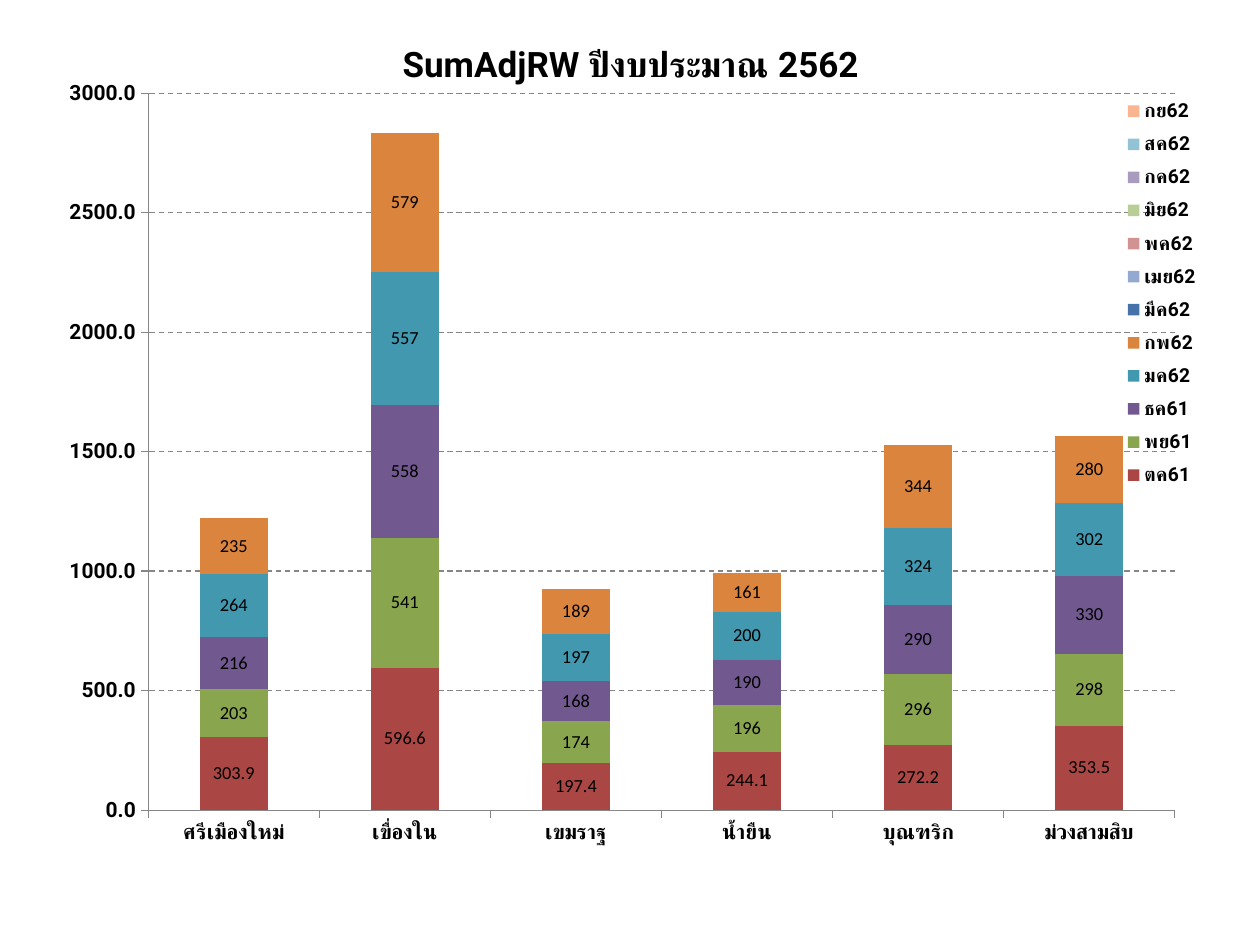
import lxml.etree
import pptx
import pptx.chart.data
import pptx.dml.color
import pptx.enum.chart
import pptx.enum.dml
import pptx.enum.text
import pptx.oxml.ns
import pptx.util
from pptx.util import Inches

DISTRICTS = ["ศรีเมืองใหม่", "เขื่องใน", "เขมราฐ", "น้ำยืน", "บุณฑริก", "ม่วงสามสิบ"]
NO_DATA = [None] * len(DISTRICTS)
MONTHS = [
    ("ตค61", "AA4643", [303.9, 596.6, 197.4, 244.1, 272.2, 353.5]),
    ("พย61", "89A54E", [203, 541, 174, 196, 296, 298]),
    ("ธค61", "71588F", [216, 558, 168, 190, 290, 330]),
    ("มค62", "4198AF", [264, 557, 197, 200, 324, 302]),
    ("กพ62", "DB843D", [235, 579, 189, 161, 344, 280]),
    ("มีค62", "4572A7", NO_DATA),
    ("เมย62", "93A9CF", NO_DATA),
    ("พค62", "D19392", NO_DATA),
    ("มิย62", "B9CD96", NO_DATA),
    ("กค62", "A99BBD", NO_DATA),
    ("สค62", "91C3D5", NO_DATA),
    ("กย62", "F9B590", NO_DATA),
]


def rgb(value):
    return pptx.dml.color.RGBColor.from_string(value)


def style_font(font, size, bold=True, name="Roboto"):
    font.size = pptx.util.Pt(size)
    font.bold = bold
    font.name = name
    font.color.rgb = rgb("000000")


def style_line(line, dashed=False):
    line.color.rgb = rgb("868686")
    line.width = pptx.util.Pt(0.75)
    if dashed:
        line.dash_style = pptx.enum.dml.MSO_LINE.DASH


def manual_layout(x, y, w, h, inner=False):
    qn = pptx.oxml.ns.qn
    layout = lxml.etree.Element(qn("c:layout"))
    manual = lxml.etree.SubElement(layout, qn("c:manualLayout"))
    settings = [("layoutTarget", "inner")] if inner else []
    settings += [("xMode", "edge"), ("yMode", "edge")]
    settings += [("x", x), ("y", y), ("w", w), ("h", h)]
    for tag, value in settings:
        lxml.etree.SubElement(manual, qn(f"c:{tag}")).set("val", str(value))
    return layout


def clear_layout(parent):
    for layout in parent.findall(pptx.oxml.ns.qn("c:layout")):
        parent.remove(layout)


def place_plot(chart):
    plot_area = chart.element.find(".//" + pptx.oxml.ns.qn("c:plotArea"))
    clear_layout(plot_area)
    plot_area.insert(0, manual_layout(0.089, 0.034, 0.877, 0.881, inner=True))


def add_month_legend(chart):
    chart.has_legend = True
    chart.legend.position = pptx.enum.chart.XL_LEGEND_POSITION.RIGHT
    chart.legend.include_in_layout = True
    style_font(chart.legend.font, 11)
    legend = chart.element.find(".//" + pptx.oxml.ns.qn("c:legend"))
    clear_layout(legend)
    overlay = legend.find(pptx.oxml.ns.qn("c:overlay"))
    overlay.addprevious(manual_layout(0.91, 0.03, 0.09, 0.5))


def style_axis(axis):
    axis.major_tick_mark = pptx.enum.chart.XL_TICK_MARK.OUTSIDE
    axis.minor_tick_mark = pptx.enum.chart.XL_TICK_MARK.NONE
    style_font(axis.tick_labels.font, 12)
    style_line(axis.format.line)


def style_month(series, color, number_format):
    series.format.fill.solid()
    series.format.fill.fore_color.rgb = rgb(color)
    labels = series.data_labels
    labels.show_value = True
    labels.number_format = number_format
    labels.number_format_is_linked = False
    style_font(labels.font, 10.5, bold=False, name="Calibri")


def add_adjrw_chart(slide):
    data = pptx.chart.data.CategoryChartData()
    data.categories = DISTRICTS
    for month, _, values in MONTHS:
        data.add_series(month, values)
    chart = slide.shapes.add_chart(
        pptx.enum.chart.XL_CHART_TYPE.COLUMN_STACKED,
        Inches(0.35), Inches(0.52), Inches(9.29), Inches(6.46), data,
    ).chart
    chart.has_title = False
    style_font(chart.font, 18, bold=False, name="Calibri")

    plot = chart.plots[0]
    plot.gap_width = 150
    plot.overlap = 100
    plot.vary_by_categories = False
    for index, (series, (_, color, _)) in enumerate(zip(plot.series, MONTHS)):
        style_month(series, color, "0" if index else "0.0")

    style_axis(chart.category_axis)
    sums = chart.value_axis
    style_axis(sums)
    sums.minimum_scale = 0
    sums.maximum_scale = 3000
    sums.major_unit = 500
    sums.tick_labels.number_format = "0.0"
    sums.tick_labels.number_format_is_linked = False
    sums.has_major_gridlines = True
    style_line(sums.major_gridlines.format.line, dashed=True)

    place_plot(chart)
    add_month_legend(chart)


def add_heading(slide, text):
    heading = slide.shapes.add_textbox(
        Inches(0.83), Inches(0.29), Inches(8.35), Inches(0.44)
    ).text_frame
    heading.word_wrap = True
    heading.auto_size = pptx.enum.text.MSO_AUTO_SIZE.SHAPE_TO_FIT_TEXT
    paragraph = heading.paragraphs[0]
    paragraph.text = text
    paragraph.alignment = pptx.enum.text.PP_ALIGN.CENTER
    style_font(paragraph.font, 20)


def main():
    deck = pptx.Presentation()
    deck.slide_width = Inches(10)
    deck.slide_height = Inches(7.5)
    slide = deck.slides.add_slide(deck.slide_layouts[6])
    add_adjrw_chart(slide)
    add_heading(slide, "SumAdjRW ปีงบประมาณ 2562")
    deck.save("out.pptx")


if __name__ == "__main__":
    main()
